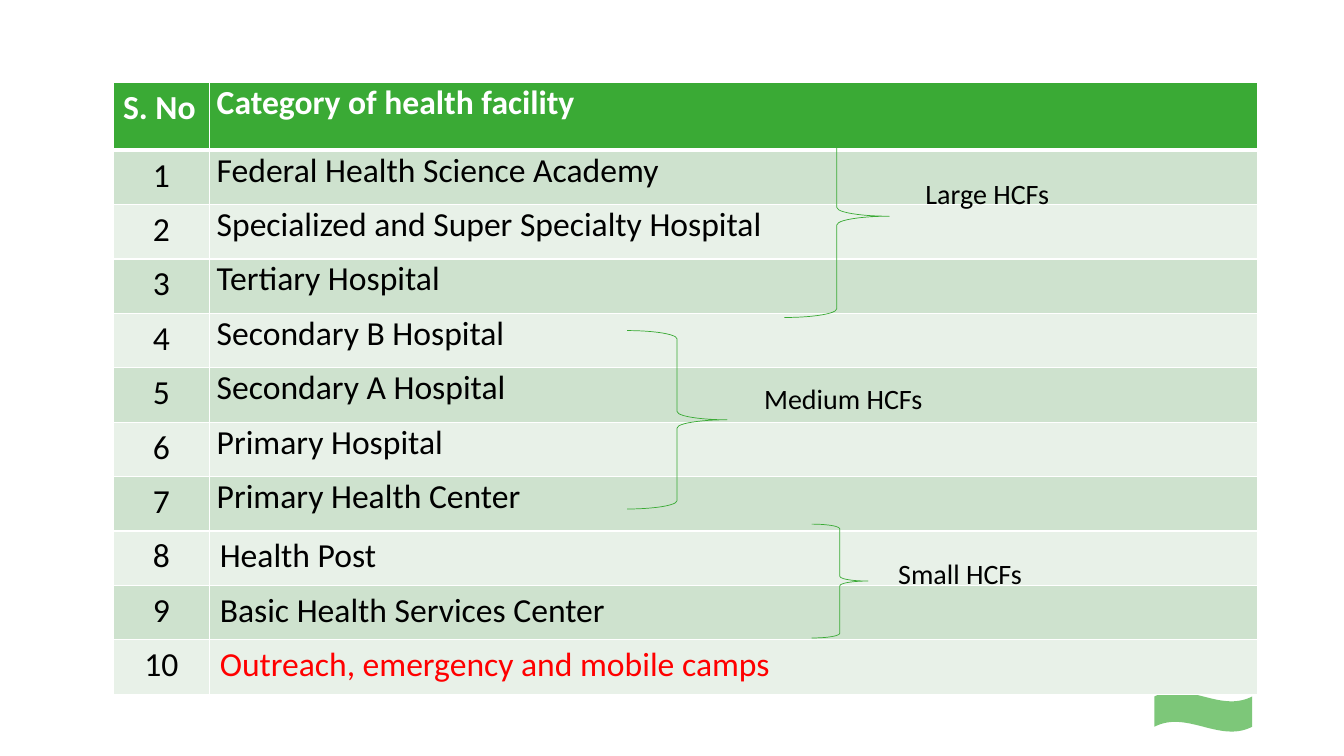
"""Build the slide that groups health facility categories by size."""
from dataclasses import dataclass

from pptx import Presentation
from pptx.dml.color import RGBColor
from pptx.enum.shapes import MSO_SHAPE
from pptx.enum.text import MSO_ANCHOR, MSO_AUTO_SIZE, PP_ALIGN
from pptx.oxml.ns import qn
from pptx.util import Emu, Pt
from lxml import etree

BRACE = MSO_SHAPE.RIGHT_BRACE
WAVE = MSO_SHAPE.WAVE
TOP = MSO_ANCHOR.TOP
GROW = MSO_AUTO_SIZE.SHAPE_TO_FIT_TEXT
LEFT, CENTER = PP_ALIGN.LEFT, PP_ALIGN.CENTER
EMU_PER_PX = 9144
BLANK_LAYOUT = 6
TIGHT, PADDED = (7, 0), (10, 5)
FIRST_PADDED_ROW = 8
HEADINGS = ("S. No", "Category of health facility")
FACILITIES = (
    "Federal Health Science Academy",
    "Specialized and Super Specialty Hospital",
    "Tertiary Hospital",
    "Secondary B Hospital",
    "Secondary A Hospital",
    "Primary Hospital",
    "Primary Health Center",
    "Health Post",
    "Basic Health Services Center",
    "Outreach, emergency and mobile camps",
)
SIZE_GROUPS = (
    ("Large HCFs", (778, 114, 104, 201), (908, 170, 342, 44)),
    ("Medium HCFs", (622, 328, 99, 177), (748, 374, 317, 44)),
    ("Small HCFs", (805, 520, 56, 113), (881, 547, 278, 44)),
)


@dataclass(frozen=True)
class Theme:
    font: str = "Calibri"
    table_size: int = 24
    label_size: int = 20
    green: str = "3AAA35"
    dark_band: str = "CEE2CE"
    light_band: str = "E8F1E8"
    white: str = "FFFFFF"
    black: str = "000000"
    red: str = "FF0000"
    brace_line: float = 0.5
    border: int = 1
    header_border: int = 3


def px(length):
    return Emu(length * EMU_PER_PX)


def set_attributes(target, values):
    for name, value in values.items():
        setattr(target, name, value)


class SlideBuilder:
    def __init__(self, slide, theme):
        self.shapes = slide.shapes
        self.theme = theme

    def text(self, text_frame, text, size, color, bold=False, align=LEFT):
        paragraph = text_frame.paragraphs[0]
        paragraph.alignment = align
        run = paragraph.add_run()
        run.text = text
        set_attributes(run.font, {"name": self.theme.font, "size": Pt(size), "bold": bold})
        run.font.color.rgb = RGBColor.from_string(color)

    def label(self, text, box):
        shape = self.shapes.add_textbox(*map(px, box))
        set_attributes(shape.text_frame, {"word_wrap": True, "auto_size": GROW})
        self.text(shape.text_frame, text, self.theme.label_size, self.theme.black)

    def brace(self, box):
        shape = self.shapes.add_shape(BRACE, *map(px, box))
        shape.shadow.inherit = False
        shape.fill.background()
        shape.line.color.rgb = RGBColor.from_string(self.theme.green)
        shape.line.width = Pt(self.theme.brace_line)

    def ribbon(self, box):
        shape = self.shapes.add_shape(WAVE, *map(px, box))
        shape.shadow.inherit = False
        shape.fill.solid()
        shape.fill.fore_color.rgb = RGBColor.from_string(self.theme.green)
        color = shape.element.spPr.find(qn("a:solidFill"))[0]
        etree.SubElement(color, qn("a:alpha"), val="66000")
        shape.line.fill.background()

    def borders(self, cell, widths):
        properties = cell._tc.get_or_add_tcPr()
        for side, width in widths.items():
            line = etree.SubElement(properties, qn(f"a:ln{side}"), w=str(int(Pt(width))))
            fill = etree.SubElement(line, qn("a:solidFill"))
            etree.SubElement(fill, qn("a:srgbClr"), val=self.theme.white)

    def cell(self, cell, text, fill, color, padding, row, align):
        across, down = padding
        set_attributes(cell, {
            "margin_left": px(across), "margin_right": px(across),
            "margin_top": px(down), "margin_bottom": px(down),
            "vertical_anchor": TOP,
        })
        widths = dict.fromkeys("LRTB", self.theme.border)
        if row < 2:
            widths["B" if row == 0 else "T"] = self.theme.header_border
        self.borders(cell, widths)
        cell.fill.solid()
        cell.fill.fore_color.rgb = RGBColor.from_string(fill)
        self.text(cell.text_frame, text, self.theme.table_size, color, row == 0, align)

    def table(self, headings, facilities, box, column_widths, row_heights):
        theme = self.theme
        rows = [headings, *((str(n), name) for n, name in enumerate(facilities, 1))]
        table = self.shapes.add_table(len(rows), len(headings), *map(px, box)).table
        for column, width in zip(table.columns, column_widths):
            column.width = px(width)
        header_height, body_height = row_heights
        for index, (number, name) in enumerate(rows):
            table.rows[index].height = px(body_height if index else header_height)
            fill = (theme.dark_band if index % 2 else theme.light_band) if index else theme.green
            color = theme.black if index else theme.white
            name_color = theme.red if index == len(rows) - 1 else color
            name_padding = TIGHT if index < FIRST_PADDED_ROW else PADDED
            self.cell(table.cell(index, 0), number, fill, color, PADDED, index,
                      CENTER if index else LEFT)
            self.cell(table.cell(index, 1), name, fill, name_color, name_padding, index, LEFT)


def main():
    presentation = Presentation()
    set_attributes(presentation, {"slide_width": px(1333), "slide_height": px(750)})
    slide = presentation.slides.add_slide(presentation.slide_layouts[BLANK_LAYOUT])
    builder = SlideBuilder(slide, Theme())
    builder.ribbon((1145, 686, 97, 40))
    builder.table(HEADINGS, FACILITIES, (112, 82, 1135, 607), (96, 1039), (67, 54))
    for text, brace_box, label_box in SIZE_GROUPS:
        builder.brace(brace_box)
        builder.label(text, label_box)
    presentation.save("out.pptx")


if __name__ == "__main__":
    main()
